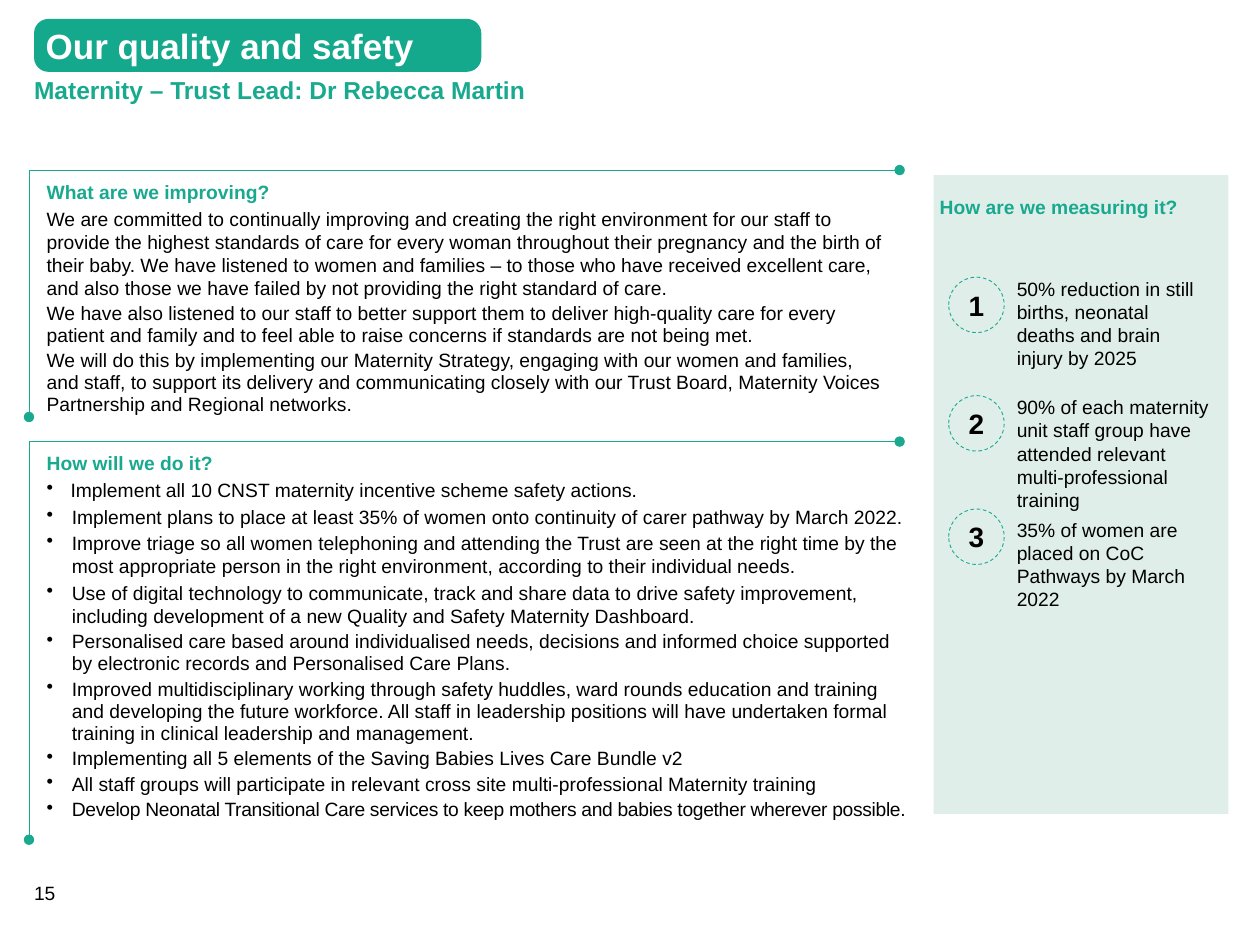
from lxml import etree
from pptx import Presentation
from pptx import util as u
from pptx.dml.color import RGBColor
from pptx.enum import dml, shapes, text
from pptx.oxml import ns

COLOURS = {"teal": "18A98E", "banner": "14A88C", "mint": "DFEEE9",
           "black": "000000", "white": "FFFFFF"}
COLUMNS, ROWS = 100, 75

AIMS = [
    ("We are committed to continually improving and creating the right environment for our staff to provide the highest standards of care for every woman throughout their pregnancy and the birth of their baby. We have listened to women and families – to those who have received excellent care, and also those we have failed by not providing the right standard of care.", {}),
    ("We have also listened to our staff to better support them to deliver high-quality care for every patient and family and to feel able to raise concerns if standards are not being met.", {"leading": 0.95}),
    ("We will do this by implementing our Maternity Strategy, engaging with our women and families, and staff, to support its delivery and communicating closely with our Trust Board, Maternity Voices Partnership and Regional networks.", {"leading": 0.95}),
]
ACTIONS = [
    ("Implement all 10 CNST maternity incentive scheme safety actions.", {"hang": 0.19}),
    ("Implement plans to place at least 35% of women onto continuity of carer pathway by March 2022.", {}),
    ("Improve triage so all women telephoning and attending the Trust are seen at the right time by the most appropriate person in the right environment, according to their individual needs.", {}),
    ("Use of digital technology to communicate, track and share data to drive safety improvement, including development of a new Quality and Safety Maternity Dashboard.", {}),
    ("Personalised care based around individualised needs, decisions and informed choice supported by electronic records and Personalised Care Plans.", {"leading": 0.95}),
    ("Improved multidisciplinary working through safety huddles, ward rounds education and training and developing the future workforce. All staff in leadership positions will have undertaken formal training in clinical leadership and management.", {"leading": 0.95}),
    ("Implementing all 5 elements of the Saving Babies Lives Care Bundle v2", {"leading": 0.95}),
    ("All staff groups will participate in relevant cross site multi-professional Maternity training", {"leading": 0.95}),
    ("Develop Neonatal Transitional Care services to keep mothers and babies together wherever possible.", {"leading": 0.95, "tracking": -0.2}),
]
MEASURES = [
    (22, 22, "50% reduction in still births, neonatal deaths and brain injury by 2025"),
    (31.4, 31.4, "90% of each maternity unit staff group have attended relevant multi-professional training"),
    (40.4, 41.1, "35% of women are placed on CoC Pathways by March 2022"),
]


def write(frame, words, size=11, colour="black", bold=False, align="LEFT",
          after=0, leading=None, hang=None, tracking=None):
    """Add one formatted paragraph to a text frame."""
    line = frame.paragraphs[0]
    if line.runs:
        line = frame.add_paragraph()
    if hang:
        properties = line._p.get_or_add_pPr()
        properties.set("marL", str(u.Inches(hang)))
        properties.set("indent", str(-u.Inches(hang)))
        etree.SubElement(properties, ns.qn("a:buChar")).set("char", "•")
    line.alignment = getattr(text.PP_ALIGN, align)
    line.space_before, line.space_after = u.Pt(0), u.Pt(after)
    if leading:
        line.line_spacing = leading
    run = line.add_run()
    run.text = words
    run.font.name, run.font.size, run.font.bold = "Arial", u.Pt(size), bold
    run.font.color.rgb = RGBColor.from_string(COLOURS[colour])
    if tracking:
        run._r.get_or_add_rPr().set("spc", str(round(tracking * 100)))


class Page:
    """Hold the slide, its grid and its house style."""

    def __init__(self, deck):
        self.slide = deck.slides.add_slide(deck.slide_layouts[5])
        self.column = deck.slide_width / COLUMNS
        self.row = deck.slide_height / ROWS

    def place(self, left, top, width, height):
        return (round(left * self.column), round(top * self.row),
                round(width * self.column), round(height * self.row))

    def frame(self, holder, inset=(0, 0), anchor="TOP"):
        frame = holder.text_frame
        frame.word_wrap = True
        frame.auto_size = text.MSO_AUTO_SIZE.NONE
        frame.vertical_anchor = getattr(text.MSO_ANCHOR, anchor)
        frame.margin_left = frame.margin_right = u.Inches(inset[0])
        frame.margin_top = frame.margin_bottom = u.Inches(inset[1])
        return frame

    def title(self, area, words):
        heading = self.slide.shapes.title
        heading.left, heading.top, heading.width, heading.height = self.place(*area)
        write(self.frame(heading, anchor="MIDDLE"), words, size=14, colour="teal", bold=True)

    def text(self, area, inset=(0, 0)):
        return self.frame(self.slide.shapes.add_textbox(*self.place(*area)), inset)

    def block(self, kind, area, fill, dashed=False):
        block = self.slide.shapes.add_shape(getattr(shapes.MSO_SHAPE, kind), *self.place(*area))
        block.shadow.inherit = False
        block.fill.solid()
        block.fill.fore_color.rgb = RGBColor.from_string(COLOURS[fill])
        if dashed:
            self.outline(block)
            block.line.dash_style = dml.MSO_LINE.DASH
        else:
            block.line.fill.background()
        return block

    def outline(self, item):
        item.line.color.rgb = RGBColor.from_string(COLOURS["teal"])
        item.line.width = u.Pt(0.5)

    def bracket(self, left, top, width, height):
        x, y, across, down = self.place(left, top, width, height)
        builder = self.slide.shapes.build_freeform(x, y + down)
        builder.add_line_segments([(x, y), (x + across, y)], close=False)
        bracket = builder.convert_to_shape()
        bracket.shadow.inherit = False
        bracket.fill.background()
        self.outline(bracket)
        for end in ("a:headEnd", "a:tailEnd"):
            etree.SubElement(bracket.line._get_or_add_ln(), ns.qn(end)).set("type", "oval")

    def section(self, top, height, width, heading, entries, hang=None):
        body = self.text((3.7, top + 0.8, width, height - 0.2))
        write(body, heading, colour="teal", bold=True, after=2)
        for words, style in entries:
            write(body, words, **{"after": 2, "hang": hang, **style})
        self.bracket(2.3, top, 69.1, height)

    def measure(self, number, badge_top, words_top, words):
        badge = self.block("OVAL", (75.3, badge_top, 4.4, 4.4), "mint", dashed=True)
        write(self.frame(badge, anchor="MIDDLE"), str(number), size=16, bold=True, align="CENTER")
        target = self.block("RECTANGLE", (80.7, words_top, 15.3, 7.4), "mint")
        write(self.frame(target), words, after=6)


def main():
    deck = Presentation()
    deck.slide_width, deck.slide_height = u.Inches(10), u.Inches(7.5)
    page = Page(deck)
    page.title((2.7, 5.9, 72.2, 2.4), "Maternity – Trust Lead: Dr Rebecca Martin")
    write(page.text((2.7, 69.9, 5.5, 1.9)), "15")

    page.section(13.5, 19.6, 66.6, "What are we improving?", AIMS)
    page.section(35.05, 31.6, 68.2, "How will we do it?", ACTIONS, hang=0.2)

    page.block("RECTANGLE", (74.1, 13.9, 23.4, 50.7), "mint")
    for number, measure in enumerate(MEASURES, 1):
        page.measure(number, *measure)
    write(page.text((73.6, 15, 21.7, 2.9), inset=(0.1, 0.05)),
          "How are we measuring it?", colour="teal", bold=True)

    banner = page.block("ROUNDED_RECTANGLE", (2.7, 1.5, 35.5, 4.2), "banner")
    banner.adjustments[0] = 0.27
    write(page.frame(banner, (0.06, 0.06), "MIDDLE"), "Our quality and safety",
          size=20, colour="white", bold=True)
    deck.save("out.pptx")


if __name__ == "__main__":
    main()
